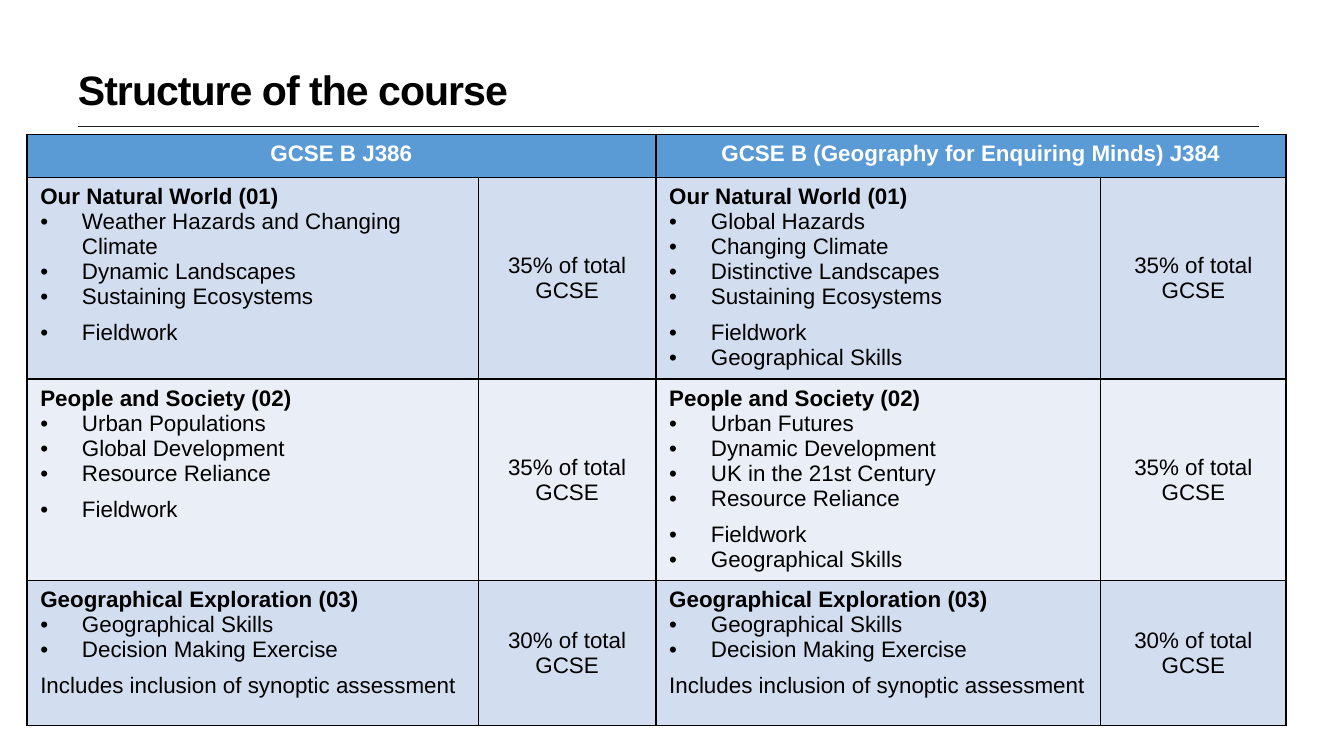
from lxml.etree import SubElement
from pptx import Presentation
from pptx.dml.color import RGBColor
from pptx.enum.shapes import MSO_CONNECTOR
from pptx.enum.text import MSO_ANCHOR, MSO_AUTO_SIZE, PP_ALIGN
from pptx.oxml.ns import qn
from pptx.util import Inches, Pt

BLACK = RGBColor(0x00, 0x00, 0x00)
WHITE = RGBColor(0xFF, 0xFF, 0xFF)
RULE = RGBColor(0x1D, 0x1D, 0x1B)
HEADER = RGBColor(0x5B, 0x9B, 0xD5)
BANDS = (RGBColor(0xD2, 0xDE, 0xEF), RGBColor(0xEA, 0xEF, 0xF7))

COLUMN_WIDTHS = (3.36, 1.32, 3.31, 1.38)
ROW_HEIGHTS = (0.32, 1.5, 1.5, 1.08)
COURSES = ("GCSE B J386", "GCSE B (Geography for Enquiring Minds) J384")
SKILLS = "Geographical Skills"
EXPLORATION = ([SKILLS, "Decision Making Exercise"], [],
               "Includes inclusion of synoptic assessment")
UNITS = [
    ("Our Natural World (01)", "35% of total GCSE", [
        (["Weather Hazards and Changing Climate", "Dynamic Landscapes",
          "Sustaining Ecosystems"], ["Fieldwork"], ""),
        (["Global Hazards", "Changing Climate", "Distinctive Landscapes",
          "Sustaining Ecosystems"], ["Fieldwork", SKILLS], ""),
    ]),
    ("People and Society (02)", "35% of total GCSE", [
        (["Urban Populations", "Global Development", "Resource Reliance"],
         ["Fieldwork"], ""),
        (["Urban Futures", "Dynamic Development", "UK in the 21st Century",
          "Resource Reliance"], ["Fieldwork", SKILLS], ""),
    ]),
    ("Geographical Exploration (03)", "30% of total GCSE",
     [EXPLORATION, EXPLORATION]),
]


def write(frame, text, size=12, color=BLACK, bold=False, align=PP_ALIGN.LEFT,
          bullet=False, before=0, spacing=None):
    paragraph = frame.paragraphs[0]
    if paragraph.runs:
        paragraph = frame.add_paragraph()
    paragraph.alignment = align
    paragraph.space_before = Pt(before)
    if bullet:
        properties = paragraph._p.get_or_add_pPr()
        properties.set("marL", str(Inches(0.31)))
        properties.set("indent", str(-Inches(0.31)))
        SubElement(properties, qn("a:buFont"), typeface="Arial")
        SubElement(properties, qn("a:buChar"), char="•")
    run = paragraph.add_run()
    run.text = text
    run.font.name = "Arial"
    run.font.size = Pt(size)
    run.font.bold = bold
    run.font.color.rgb = color
    if spacing is not None:
        run._r.get_or_add_rPr().set("spc", str(int(spacing * 100)))


class SlideBuilder:
    gap = 5.8
    border = Pt(1)

    def __init__(self, slide):
        self.slide = slide

    def title(self, text, left, top, width, height):
        shape = self.slide.shapes.title
        shape.left, shape.top = Inches(left), Inches(top)
        shape.width, shape.height = Inches(width), Inches(height)
        frame = shape.text_frame
        frame.margin_left = frame.margin_right = 0
        frame.margin_top = frame.margin_bottom = 0
        frame.auto_size = MSO_AUTO_SIZE.NONE
        frame.vertical_anchor = MSO_ANCHOR.MIDDLE
        write(frame, text, size=22, bold=True, spacing=-0.5)

    def rule(self, left, top, width):
        line = self.slide.shapes.add_connector(
            MSO_CONNECTOR.STRAIGHT, Inches(left), Inches(top),
            Inches(left + width), Inches(top))
        line.line.color.rgb = RULE
        line.line.width = Pt(0.5)
        SubElement(line._element.spPr, qn("a:effectLst"))

    def table(self, left, top, widths, heights):
        table = self.slide.shapes.add_table(
            len(heights), len(widths), Inches(left), Inches(top),
            Inches(sum(widths)), Inches(sum(heights))).table
        table.horz_banding = False
        for column, width in zip(table.columns, widths):
            column.width = Inches(width)
        for index, (row, height) in enumerate(zip(table.rows, heights)):
            row.height = Inches(height)
            for cell in row.cells:
                self.style_cell(cell, BANDS[(index - 1) % 2] if index else HEADER)
        return table

    def style_cell(self, cell, color):
        properties = cell._tc.get_or_add_tcPr()
        for side in ("L", "R", "T", "B"):
            line = SubElement(properties, qn(f"a:ln{side}"), w=str(self.border))
            fill = SubElement(line, qn("a:solidFill"))
            SubElement(fill, qn("a:srgbClr"), val=str(BLACK))
        cell.fill.solid()
        cell.fill.fore_color.rgb = color

    def header(self, table, column, text):
        cell = table.cell(0, column)
        cell.merge(table.cell(0, column + 1))
        write(cell.text_frame, text, color=WHITE, bold=True, align=PP_ALIGN.CENTER)

    def unit(self, cell, name, topics, extras, note):
        frame = cell.text_frame
        write(frame, name, bold=True)
        for topic in topics:
            write(frame, topic, bullet=True)
        for index, extra in enumerate(extras):
            write(frame, extra, bullet=True, before=0 if index else self.gap)
        if note:
            write(frame, note, before=self.gap)

    def weight(self, cell, text):
        cell.vertical_anchor = MSO_ANCHOR.MIDDLE
        write(cell.text_frame, text, align=PP_ALIGN.CENTER)


def main():
    presentation = Presentation()
    presentation.slide_width = Inches(10)
    presentation.slide_height = Inches(10 * 9 / 16)
    builder = SlideBuilder(
        presentation.slides.add_slide(presentation.slide_layouts[5]))
    builder.rule(0.58, 0.94, 8.79)
    builder.title("Structure of the course", 0.58, 0.48, 8.78, 0.37)
    table = builder.table(0.2, 1, COLUMN_WIDTHS, ROW_HEIGHTS)
    for index, course in enumerate(COURSES):
        builder.header(table, 2 * index, course)
    for row, (name, share, contents) in enumerate(UNITS, start=1):
        for index, content in enumerate(contents):
            builder.unit(table.cell(row, 2 * index), name, *content)
            builder.weight(table.cell(row, 2 * index + 1), share)
    presentation.save("out.pptx")


if __name__ == "__main__":
    main()
